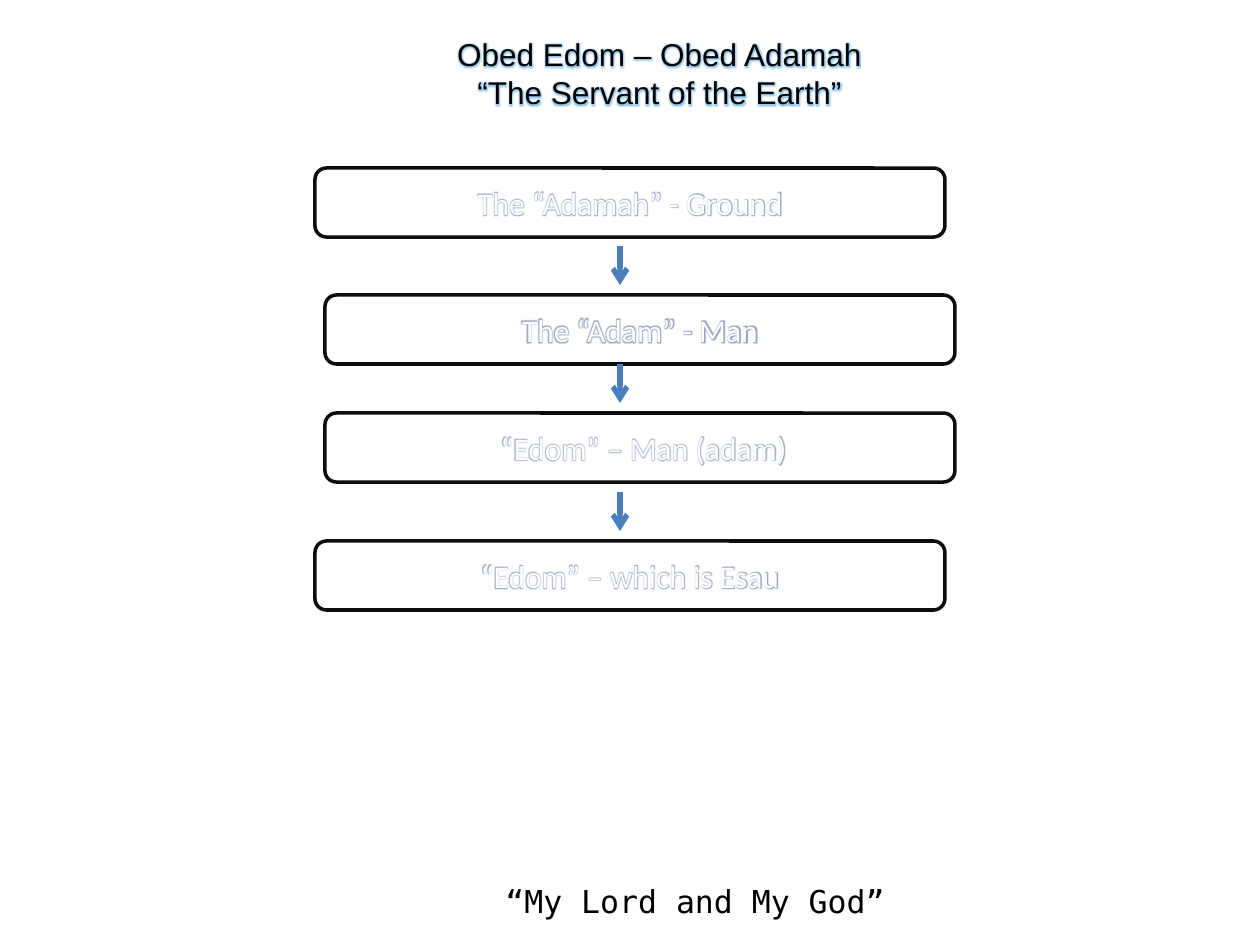
from lxml import etree
from pptx import Presentation
from pptx import util as u
from pptx.dml.color import RGBColor
from pptx.enum import shapes, text
from pptx.oxml.ns import qn

# Content
TITLE = ["Obed Edom – Obed Adamah", "“The Servant of the Earth”"]
CREED = ["“My Lord and My God”"]
STEPS = [  # label, left, top
    ("The “Adamah” - Ground", 315, 168),
    ("The “Adam” - Man", 325, 295),
    (" “Edom” – Man (adam)", 325, 413),
    ("“Edom” – which is Esau", 315, 541),
]


class Theme:
    ink, white, edge, arrow = "000000", "FFFFFF", "0D0D0D", "4B7EBC"
    title_glow, step_glow = "4FA8E0", "53659A"
    size = u.Pt(18)
    title, step, creed = "Arial", "Calibri", "DejaVu Sans Mono"


# Layout in px
BOX_W, BOX_H = 630, 69
ARROW_X, ARROW_H, ARROW_GAP = 620, 39, 10


def px(n):
    return u.Emu(n * 914400 // 126)


def rgb(color):
    return RGBColor.from_string(color)


def add_glow(run, color):
    fx = etree.SubElement(run.font._element, qn("a:effectLst")) if hasattr(
        run.font, "_element") else etree.SubElement(
        run._r.get_or_add_rPr(), qn("a:effectLst"))
    glow = etree.SubElement(fx, qn("a:glow"), rad="38100")
    tint = etree.SubElement(glow, qn("a:srgbClr"), val=color)
    etree.SubElement(tint, qn("a:alpha"), val="60000")


def write(frame, lines, face, color, align, glow=None):
    for i, line in enumerate(lines):
        para = frame.paragraphs[0] if i == 0 else frame.add_paragraph()
        para.alignment = align
        font = para.font
        font.name, font.size = face, Theme.size
        font.color.rgb = rgb(color)
        run = para.add_run()
        run.text = line
        if glow:
            add_glow(run, glow)


def add_label(slide, box, wrap, *style):
    frame = slide.shapes.add_textbox(*map(px, box)).text_frame
    frame.word_wrap = wrap
    write(frame, *style)


def add_step(slide, label, left, top):
    box = slide.shapes.add_shape(
        shapes.MSO_SHAPE.ROUNDED_RECTANGLE, *map(px, (left, top, BOX_W, BOX_H)))
    box.shadow.inherit = False
    box.fill.background()
    box.line.color.rgb = rgb(Theme.edge)
    box.line.width = u.Pt(2)
    box.text_frame.vertical_anchor = text.MSO_ANCHOR.MIDDLE
    write(box.text_frame, [label], Theme.step, Theme.white,
          text.PP_ALIGN.CENTER, Theme.step_glow)


def add_arrow(slide, end):
    line = slide.shapes.add_connector(
        shapes.MSO_CONNECTOR.STRAIGHT,
        *map(px, (ARROW_X, end - ARROW_H, ARROW_X, end)))
    line.line.color.rgb = rgb(Theme.arrow)
    line.line.width = u.Pt(3)
    etree.SubElement(line.line._get_or_add_ln(), qn("a:tailEnd"), type="arrow")
    etree.SubElement(line._element.spPr, qn("a:effectLst"))


def main():
    deck = Presentation()
    deck.slide_width, deck.slide_height = px(1260), px(945)
    slide = deck.slides.add_slide(deck.slide_layouts[6])

    # Closing words and title
    add_label(slide, (493, 876, 630, 50), True, CREED, Theme.creed,
              Theme.ink, text.PP_ALIGN.LEFT)
    add_label(slide, (443, 29, 433, 89), False, TITLE, Theme.title,
              Theme.ink, text.PP_ALIGN.CENTER, Theme.title_glow)

    # Chain of steps, an arrow leading into each after the first
    for step in STEPS:
        add_step(slide, *step)
    for _, _, top in STEPS[1:]:
        add_arrow(slide, top - ARROW_GAP)

    deck.save("out.pptx")


if __name__ == "__main__":
    main()
